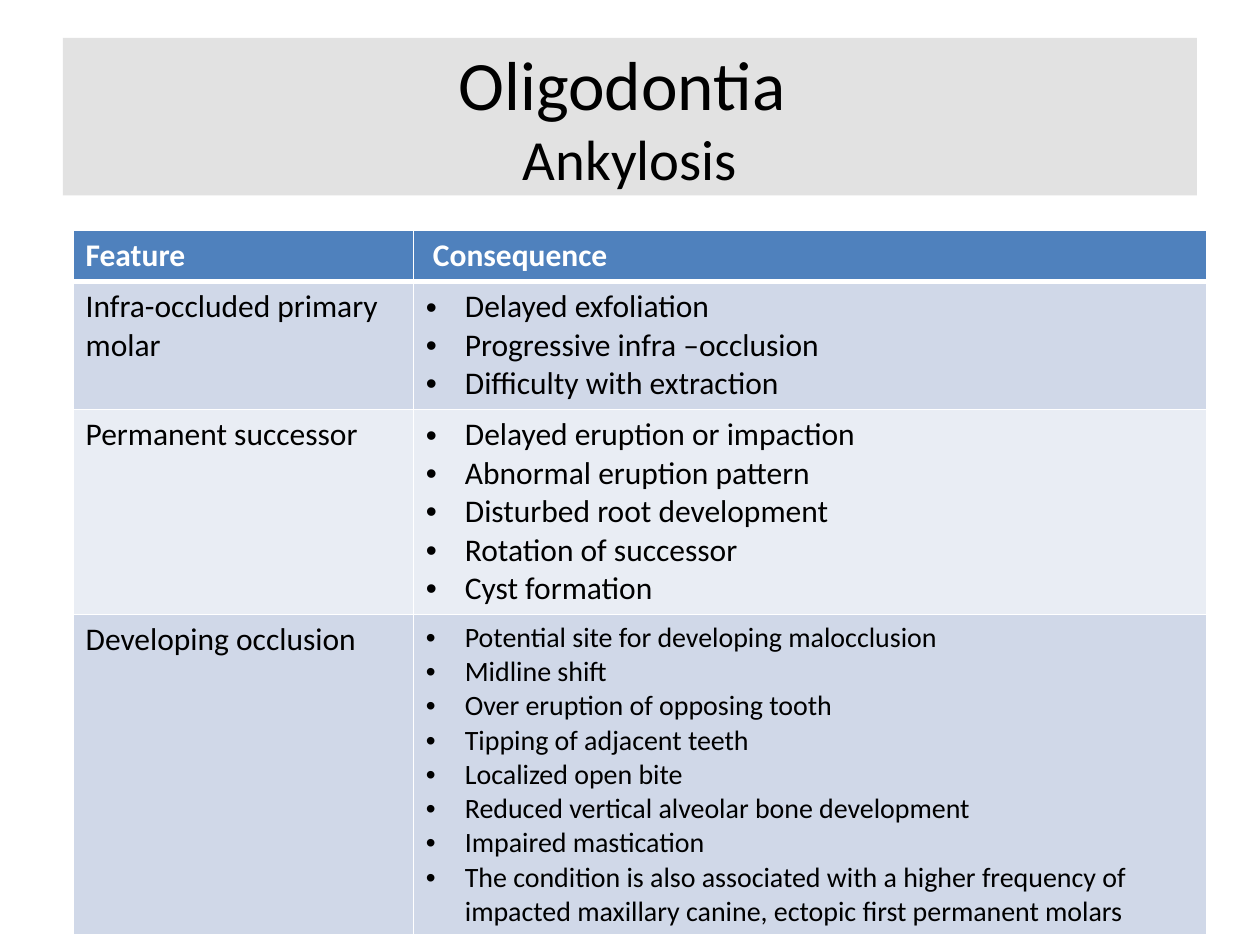
"""Build a slide with a table of the consequences of ankylosis in oligodontia."""
import lxml.etree
import pptx
import pptx.dml.color
import pptx.enum.shapes
import pptx.enum.text
import pptx.oxml.ns
import pptx.util
from pptx.util import Inches

FONT = "Calibri"


def color(hex_code):
    return pptx.dml.color.RGBColor.from_string(hex_code)


def add_element(parent, tag, **attributes):
    return lxml.etree.SubElement(parent, pptx.oxml.ns.qn(tag), attributes)


features = [
    ("Infra-occluded primary molar", 18, "D0D8E8", [
        "Delayed exfoliation",
        "Progressive infra –occlusion",
        "Difficulty with extraction",
    ]),
    ("Permanent successor", 18, "E9EDF4", [
        "Delayed eruption or impaction",
        "Abnormal eruption pattern",
        "Disturbed root development",
        "Rotation of successor",
        "Cyst formation",
    ]),
    ("Developing occlusion", 16, "D0D8E8", [
        "Potential site for developing malocclusion",
        "Midline shift",
        "Over eruption of opposing tooth",
        "Tipping of adjacent teeth",
        "Localized open bite",
        "Reduced vertical alveolar bone development",
        "Impaired mastication",
        "The condition is also associated with a higher frequency of "
        "impacted maxillary canine, ectopic first permanent molars",
    ]),
]

presentation = pptx.Presentation()
presentation.slide_width = Inches(10)
presentation.slide_height = Inches(7.5)
slide = presentation.slides.add_slide(presentation.slide_layouts[6])

banner = slide.shapes.add_shape(
    pptx.enum.shapes.MSO_SHAPE.RECTANGLE, Inches(0.5), Inches(0.3), Inches(9), Inches(1.25))
banner.shadow.inherit = False
banner.line.fill.background()
banner.fill.solid()
banner.fill.fore_color.rgb = color("D9D9D9")
banner_color = banner.fill._xPr.find(".//" + pptx.oxml.ns.qn("a:srgbClr"))
add_element(banner_color, "a:alpha", val="75000")
banner.text_frame.word_wrap = True
banner.text_frame.vertical_anchor = pptx.enum.text.MSO_ANCHOR.MIDDLE
heading = banner.text_frame.paragraphs[0]
heading.alignment = pptx.enum.text.PP_ALIGN.CENTER
heading.font.name = FONT
heading.font.color.rgb = color("000000")
topic = heading.add_run()
topic.text = "Oligodontia "
topic.font.size = pptx.util.Pt(39.6)
heading.add_line_break()
subtopic = heading.add_run()
subtopic.text = "Ankylosis"
subtopic.font.size = pptx.util.Pt(32.4)

rows = [(["Feature"], [" Consequence"], 18, "4F81BD")]
rows += [([feature], consequences, size, fill) for feature, size, fill, consequences in features]
table = slide.shapes.add_table(
    len(rows), 2, Inches(0.58), Inches(1.83), Inches(9), Inches(4.85)).table
for column, width in zip(table.columns, (2.7, 6.3)):
    column.width = Inches(width)
for row, height in zip(table.rows, (0.37, 0.92, 1.39, 2.17)):
    row.height = Inches(height)

for row_index, (feature, consequences, size, fill) in enumerate(rows):
    is_header = row_index == 0
    for column_index, lines in enumerate((feature, consequences)):
        cell = table.cell(row_index, column_index)
        cell.text = "\n".join(lines)
        bulleted = column_index == 1 and not is_header
        for paragraph in cell.text_frame.paragraphs:
            if bulleted:
                properties = paragraph._p.get_or_add_pPr()
                properties.set("marL", str(Inches(0.31)))
                properties.set("indent", str(-Inches(0.31)))
                add_element(properties, "a:buFont", typeface="Arial")
                add_element(properties, "a:buChar", char="•")
            paragraph.font.name = FONT
            paragraph.font.size = pptx.util.Pt(size if bulleted else 18)
            paragraph.font.bold = is_header
            paragraph.font.color.rgb = color("FFFFFF" if is_header else "000000")

        cell_properties = cell._tc.get_or_add_tcPr()
        for side in "LRTB":
            thick = (row_index, side) in ((0, "B"), (1, "T"))
            border = add_element(
                cell_properties, "a:ln" + side, w=str(pptx.util.Pt(3 if thick else 1)))
            add_element(add_element(border, "a:solidFill"), "a:srgbClr", val="FFFFFF")
        cell.fill.solid()
        cell.fill.fore_color.rgb = color(fill)

presentation.save("out.pptx")
